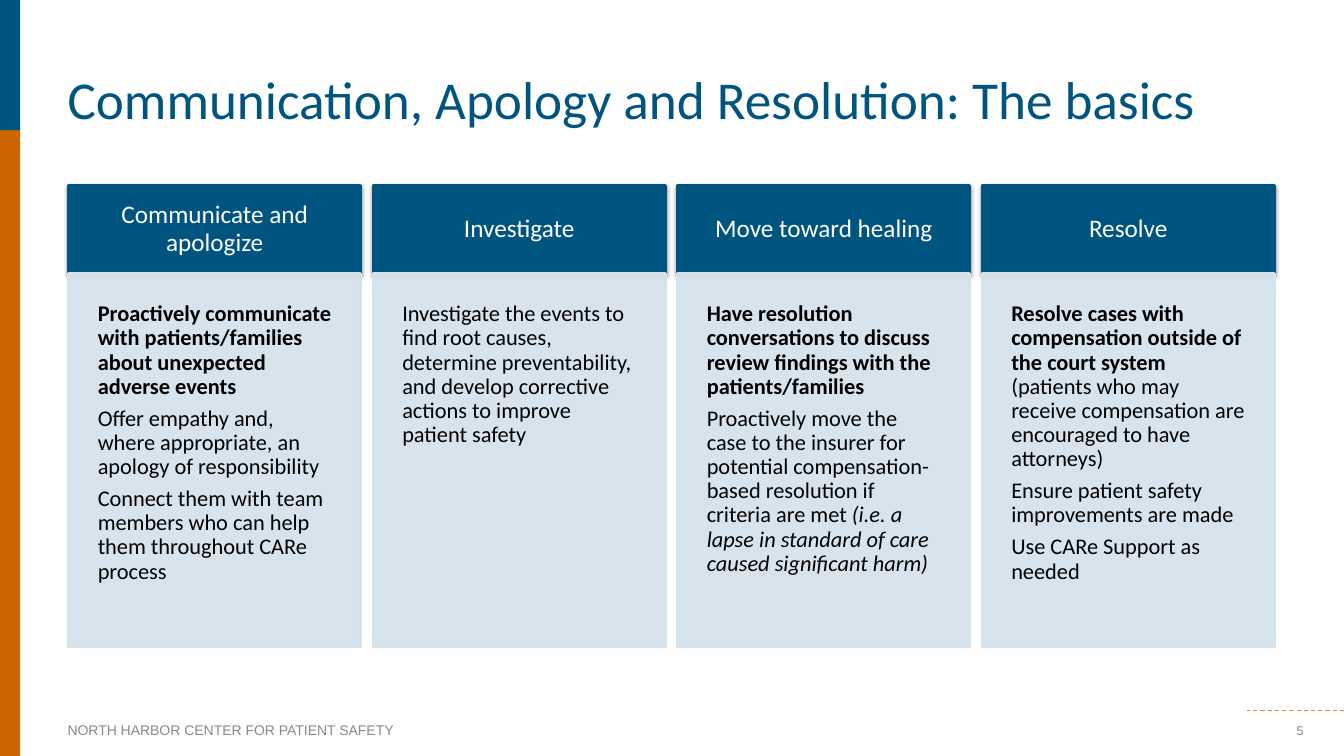
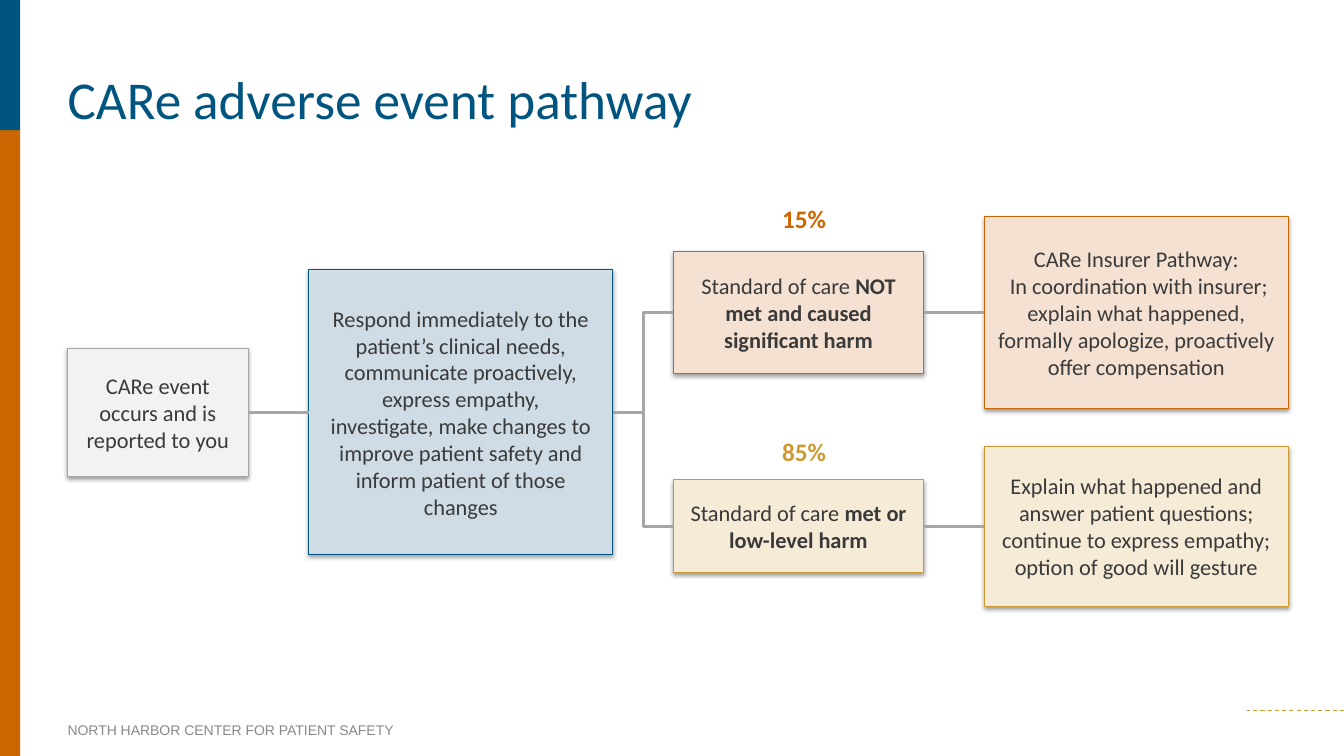
"""Build two slides on communication, apology and resolution after adverse events."""
from lxml.etree import SubElement
from pptx import Presentation
from pptx.dml.color import RGBColor
from pptx.enum.dml import MSO_LINE
from pptx.enum.shapes import MSO_CONNECTOR, MSO_SHAPE
from pptx.enum.text import MSO_ANCHOR, MSO_AUTO_SIZE, PP_ALIGN
from pptx.oxml.ns import qn
from pptx.util import Inches, Pt

BLUE = RGBColor(0x00, 0x54, 0x80)
ORANGE = RGBColor(0xCC, 0x66, 0x00)
GOLD = RGBColor(0xCC, 0x99, 0x33)
PALE_BLUE = RGBColor(0xD4, 0xE2, 0xEC)
PALE_ORANGE = RGBColor(0xF5, 0xE1, 0xD1)
PALE_GOLD = RGBColor(0xF5, 0xEB, 0xD6)
PALE_GRAY = RGBColor(0xF2, 0xF2, 0xF2)
LINE_GRAY = RGBColor(0xA6, 0xA6, 0xA6)
FOOTER_GRAY = RGBColor(0x89, 0x89, 0x89)
INK = RGBColor(0x3A, 0x3A, 0x3A)
BLACK = RGBColor(0x00, 0x00, 0x00)
WHITE = RGBColor(0xFF, 0xFF, 0xFF)

PLAIN = {"bold": False}
BOLD = {"bold": True}
ITALIC = {"italic": True}
CENTERED = {"alignment": PP_ALIGN.CENTER, "space_after": Pt(5.6)}
TIGHT = {"line_spacing": 0.9, "space_after": Pt(5.6)}


def write(frame, paragraphs, color, font, layout, inset=(0, 0), anchor=MSO_ANCHOR.MIDDLE):
    """Fill a text frame with paragraphs made of (text, style) runs."""
    across, down = (Inches(margin) for margin in inset)
    frame_format = {
        "word_wrap": True, "auto_size": MSO_AUTO_SIZE.NONE, "vertical_anchor": anchor,
        "margin_left": across, "margin_right": across,
        "margin_top": down, "margin_bottom": down,
    }
    for name, value in frame_format.items():
        setattr(frame, name, value)
    for number, runs in enumerate(paragraphs):
        paragraph = frame.add_paragraph() if number else frame.paragraphs[0]
        for name, value in layout.items():
            setattr(paragraph, name, value)
        for text, style in runs:
            if text == "\n":
                paragraph.add_line_break()
                continue
            run = paragraph.add_run()
            run.text = text
            run.font.color.rgb = color
            for name, value in {"name": "Calibri", **font, **style}.items():
                setattr(run.font, name, value)


def add_panel(slide, place, fill, outline=None, width=0.75, shadow=False, opacity=100):
    """Add a rectangle, with an outline, soft shadow and opacity if asked."""
    panel = slide.shapes.add_shape(MSO_SHAPE.RECTANGLE, *map(Inches, place))
    panel.fill.solid()
    panel.fill.fore_color.rgb = fill
    if outline is None:
        panel.line.fill.background()
    else:
        panel.line.color.rgb = outline
        panel.line.width = Pt(width)
    panel.shadow.inherit = False
    properties = panel.element.spPr
    if opacity < 100:
        tint = properties.find(qn("a:solidFill")).find(qn("a:srgbClr"))
        SubElement(tint, qn("a:alpha"), val=str(opacity * 1000))
    if shadow:
        cast = SubElement(properties.find(qn("a:effectLst")), qn("a:outerShdw"),
                          blurRad="40000", dist="20000", dir="5400000", rotWithShape="0")
        shade = SubElement(cast, qn("a:srgbClr"), val="000000")
        SubElement(shade, qn("a:alpha"), val="38000")
    return panel


deck = Presentation()
deck.slide_width = Inches(13.33)
deck.slide_height = Inches(7.5)
title_only = deck.slide_layouts[5]
for placeholder in list(title_only.placeholders):
    if placeholder.placeholder_format.idx != 0:
        placeholder.element.getparent().remove(placeholder.element)

basics = deck.slides.add_slide(title_only)
pathway = deck.slides.add_slide(title_only)

orange_band = add_panel(basics, (0, 1.29, 0.2, 6.21), ORANGE)
blue_band = add_panel(basics, (0, 0, 0.2, 1.29), BLUE)
footer_rule = basics.shapes.add_connector(
    MSO_CONNECTOR.STRAIGHT, Inches(13.33), Inches(7.05), Inches(12.37), Inches(7.05))
footer_rule.line.color.rgb = GOLD
footer_rule.line.width = Pt(0.75)
footer_rule.line.dash_style = MSO_LINE.DASH
SubElement(footer_rule.element.spPr, qn("a:effectLst"))
footer = basics.shapes.add_textbox(Inches(0.67), Inches(7.02), Inches(4.06), Inches(0.45))
write(footer.text_frame, [[("NORTH HARBOR CENTER FOR PATIENT SAFETY", PLAIN)]],
      FOOTER_GRAY, {"name": "Arial", "size": Pt(10)}, {})
for shared_part in (orange_band, blue_band, footer_rule, footer):
    title_only.shapes.element.append(shared_part.element)

for slide, heading in (
    (basics, "Communication, Apology and Resolution: The basics"),
    (pathway, "CARe adverse event pathway"),
):
    title = slide.shapes.title
    title.left, title.top, title.width, title.height = map(Inches, (0.67, 0.21, 12, 1.08))
    write(title.text_frame, [[(heading, PLAIN)]], BLUE, {"size": Pt(38)},
          {"alignment": PP_ALIGN.LEFT}, anchor=MSO_ANCHOR.BOTTOM)

steps = [
    ("Communicate and apologize", [
        [("Proactively communicate with patients/families about unexpected adverse events",
          BOLD)],
        [("Offer empathy and, where appropriate, an apology of responsibility", PLAIN)],
        [("Connect them with team members who can help them throughout CARe process", PLAIN)],
    ]),
    ("Investigate", [
        [("Investigate the events to find root causes, determine preventability, "
          "and develop corrective actions to improve patient safety", PLAIN)],
    ]),
    ("Move toward healing", [
        [("Have resolution conversations to discuss review findings with the "
          "patients/families", BOLD)],
        [("Proactively move the case to the insurer for potential compensation-based "
          "resolution if criteria are met ", PLAIN),
         ("(i.e. a lapse in standard of care caused significant harm)", ITALIC)],
    ]),
    ("Resolve", [
        [("Resolve cases with compensation outside of the court system", BOLD),
         (" (patients who may receive compensation are encouraged to have attorneys)", PLAIN)],
        [("Ensure patient safety improvements are made", PLAIN)],
        [("Use CARe Support as needed", PLAIN)],
    ]),
]
STEP_WIDTH = 2.9
STEP_PITCH = 3.02
for column, (step, details) in enumerate(steps):
    left = 0.68 + column * STEP_PITCH
    header = add_panel(basics, (left, 1.84, STEP_WIDTH, 0.87), BLUE, BLUE, 2, shadow=True)
    write(header.text_frame, [[(step, PLAIN)]], WHITE, {"size": Pt(18)},
          {**TIGHT, "alignment": PP_ALIGN.CENTER}, (0.23, 0.23))
    body = add_panel(basics, (left, 2.71, STEP_WIDTH, 3.71), PALE_BLUE, PALE_BLUE, 2,
                     opacity=90)
    write(body.text_frame, details, BLACK, {"size": Pt(16)},
          {**TIGHT, "alignment": PP_ALIGN.LEFT}, (0.29, 0.29), MSO_ANCHOR.TOP)

page_number = basics.shapes.add_textbox(Inches(9.82), Inches(7.05), Inches(3.11), Inches(0.4))
write(page_number.text_frame, [[("5", PLAIN)]], FOOTER_GRAY,
      {"name": "Arial", "size": Pt(9)}, {"alignment": PP_ALIGN.RIGHT, "space_after": Pt(6)})

GAP = 0.6
STAGE_WIDTHS = (1.79, 3.02, 2.48, 3.02)
stage_lefts = [0.67 + sum(STAGE_WIDTHS[:stage]) + stage * GAP for stage in range(4)]
MIDDLE, UPPER, LOWER = 4.09, 3.1, 5.22
boxes = {
    "event": (0, MIDDLE, 1.27, PALE_GRAY, LINE_GRAY, 100, (0.1, 0.01), [
        ("CARe event occurs and is reported to you", PLAIN)]),
    "response": (1, MIDDLE, 2.83, PALE_BLUE, BLUE, 90, (0.2, 0.2), [
        ("Respond immediately to the patient’s clinical needs, communicate proactively, "
         "express empathy, investigate, make changes to improve patient safety and "
         "inform patient of those changes", PLAIN)]),
    "not met": (2, UPPER, 1.21, PALE_ORANGE, ORANGE, 100, (0.1, 0.1), [
        ("Standard of care ", PLAIN), ("NOT met and caused significant harm", BOLD)]),
    "insurer": (3, UPPER, 1.9, PALE_ORANGE, ORANGE, 100, (0.1, 0.1), [
        ("CARe Insurer Pathway:", PLAIN), ("\n", PLAIN),
        (" In coordination with insurer; explain what happened, formally apologize, "
         "proactively offer compensation", PLAIN)]),
    "met": (2, LOWER, 0.92, PALE_GOLD, GOLD, 100, (0.1, 0.1), [
        ("Standard of care ", PLAIN), ("met or low-level harm", BOLD)]),
    "explain": (3, LOWER, 1.59, PALE_GOLD, GOLD, 100, (0.1, 0.1), [
        ("Explain what happened and answer patient questions; continue to express empathy; "
         "option of good will gesture", PLAIN)]),
}
stages = {}
for key, (stage, center, height, fill, outline, opacity, inset, runs) in boxes.items():
    place = (stage_lefts[stage], center - height / 2, STAGE_WIDTHS[stage], height)
    stages[key] = add_panel(pathway, place, fill, outline, shadow=True, opacity=opacity)
    write(stages[key].text_frame, [runs], INK, {"size": Pt(16)}, CENTERED, inset)

for source, target, bend in (
    ("event", "response", MSO_CONNECTOR.STRAIGHT),
    ("response", "not met", MSO_CONNECTOR.ELBOW),
    ("response", "met", MSO_CONNECTOR.ELBOW),
    ("not met", "insurer", MSO_CONNECTOR.STRAIGHT),
    ("met", "explain", MSO_CONNECTOR.STRAIGHT),
):
    link = pathway.shapes.add_connector(bend, 0, 0, 0, 0)
    link.begin_connect(stages[source], 3)
    link.end_connect(stages[target], 1)
    link.line.color.rgb = LINE_GRAY
    link.line.width = Pt(2)
    SubElement(link.element.spPr, qn("a:effectLst"))

for share, top, color in (("15%", 1.97, ORANGE), ("85%", 4.28, GOLD)):
    label = pathway.shapes.add_textbox(Inches(7.6), Inches(top), Inches(0.75), Inches(0.4))
    write(label.text_frame, [[(share, BOLD)]], color, {"size": Pt(18)},
          {"alignment": PP_ALIGN.CENTER}, (0.1, 0.05), MSO_ANCHOR.TOP)

deck.save("out.pptx")
